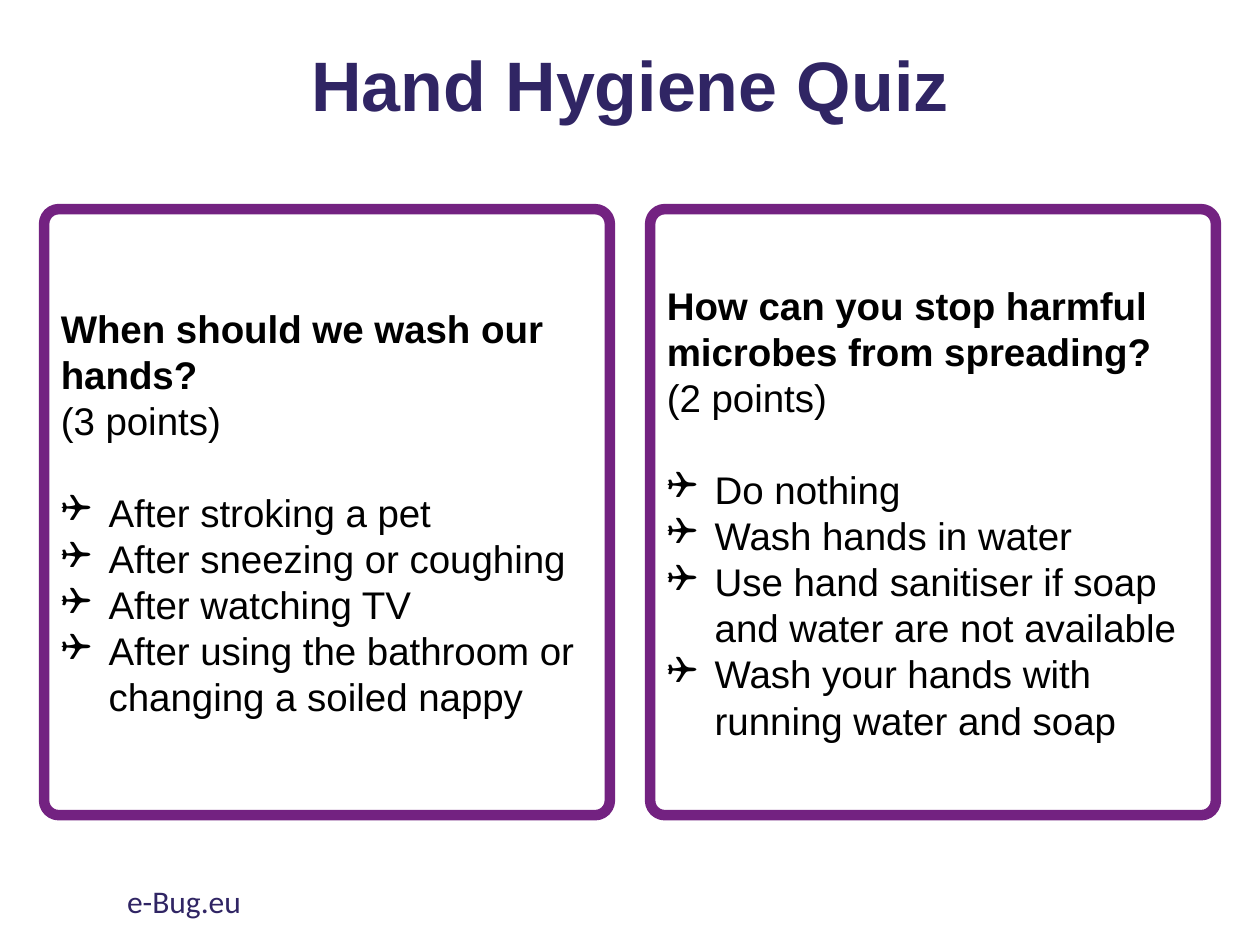
from dataclasses import dataclass

from lxml.etree import SubElement
from pptx import Presentation
from pptx.dml.color import RGBColor
from pptx.enum.shapes import MSO_SHAPE
from pptx.enum.text import MSO_ANCHOR, MSO_AUTO_SIZE, PP_ALIGN
from pptx.oxml.ns import qn
from pptx.util import Pt

PX = 9144  # EMU in one px, 100 px to the inch
NAVY = RGBColor(0x30, 0x25, 0x64)
PURPLE = RGBColor(0x73, 0x22, 0x81)
BLACK = RGBColor(0, 0, 0)

# Card grid
LEFT, TOP, WIDE, HIGH, GAP = 35, 166, 449, 481, 32
INDENT, TAB = 38, 50
BLANK = 26  # points between the question and its answers


@dataclass
class Card:
    ask: str
    points: str
    answers: list[str]


CARDS = [
    Card("When should we wash our hands?", "(3 points)", [
        "After stroking a pet",
        "After sneezing or coughing",
        "After watching TV",
        "After using the bathroom or changing a soiled nappy",
    ]),
    Card("How can you stop harmful microbes from spreading?", "(2 points)", [
        "Do nothing",
        "Wash hands in water",
        "Use hand sanitiser if soap and water are not available",
        "Wash your hands with running water and soap",
    ]),
]


def write(frame, text: str, *, size=22, color=BLACK, font="Arial", bold=False,
          align=PP_ALIGN.LEFT, bullet="", before=0, lines=None) -> None:
    """Fill the first paragraph if it is empty, else add one."""
    para = frame.paragraphs[0]
    if para.text:
        para = frame.add_paragraph()
    para.alignment = align
    if lines:
        para.line_spacing = lines
    if before:
        para.space_before = Pt(before)
    if bullet:
        props = para._p.get_or_add_pPr()
        props.set("marL", str(INDENT * PX))
        props.set("indent", str(-INDENT * PX))
        SubElement(props, qn("a:buFont"), typeface="Wingdings")
        SubElement(props, qn("a:buChar"), char=bullet)
        tabs = SubElement(props, qn("a:tabLst"))
        SubElement(tabs, qn("a:tab"), pos=str(TAB * PX), algn="l")
    run = para.add_run()
    run.text = text
    run.font.name = font
    run.font.size = Pt(size)
    run.font.bold = bold
    run.font.color.rgb = color


def draw(slide, card: Card, left: int) -> None:
    box = slide.shapes.add_shape(MSO_SHAPE.ROUNDED_RECTANGLE, left * PX,
                                 TOP * PX, WIDE * PX, HIGH * PX)
    box.adjustments[0] = 0.026
    box.shadow.inherit = False
    box.fill.background()
    box.line.color.rgb = PURPLE
    box.line.width = Pt(6)
    frame = box.text_frame
    frame.word_wrap = True
    frame.vertical_anchor = MSO_ANCHOR.MIDDLE
    write(frame, card.ask, bold=True)
    write(frame, card.points)
    for i, answer in enumerate(card.answers):
        write(frame, answer, bullet="❑", before=0 if i else BLANK)


def main() -> None:
    deck = Presentation()
    deck.slide_width, deck.slide_height = 1000 * PX, 750 * PX
    slide = deck.slides.add_slide(deck.slide_layouts[5])

    # Title
    title = slide.shapes.title
    title.left, title.top = 69 * PX, 25 * PX
    title.width, title.height = 862 * PX, 91 * PX
    title.text_frame.auto_size = MSO_AUTO_SIZE.NONE
    title.text_frame.vertical_anchor = MSO_ANCHOR.MIDDLE
    write(title.text_frame, "Hand Hygiene Quiz", size=40, color=NAVY,
          bold=True, align=PP_ALIGN.CENTER, lines=0.9)

    # Question cards
    for i, card in enumerate(CARDS):
        draw(slide, card, LEFT + i * (WIDE + GAP))

    # Footer
    foot = slide.shapes.add_textbox(91 * PX, 695 * PX, 338 * PX, 40 * PX)
    foot.text_frame.word_wrap = True
    write(foot.text_frame, "e-Bug.eu", size=18, color=NAVY, font="Calibri")

    deck.save("out.pptx")


if __name__ == "__main__":
    main()
